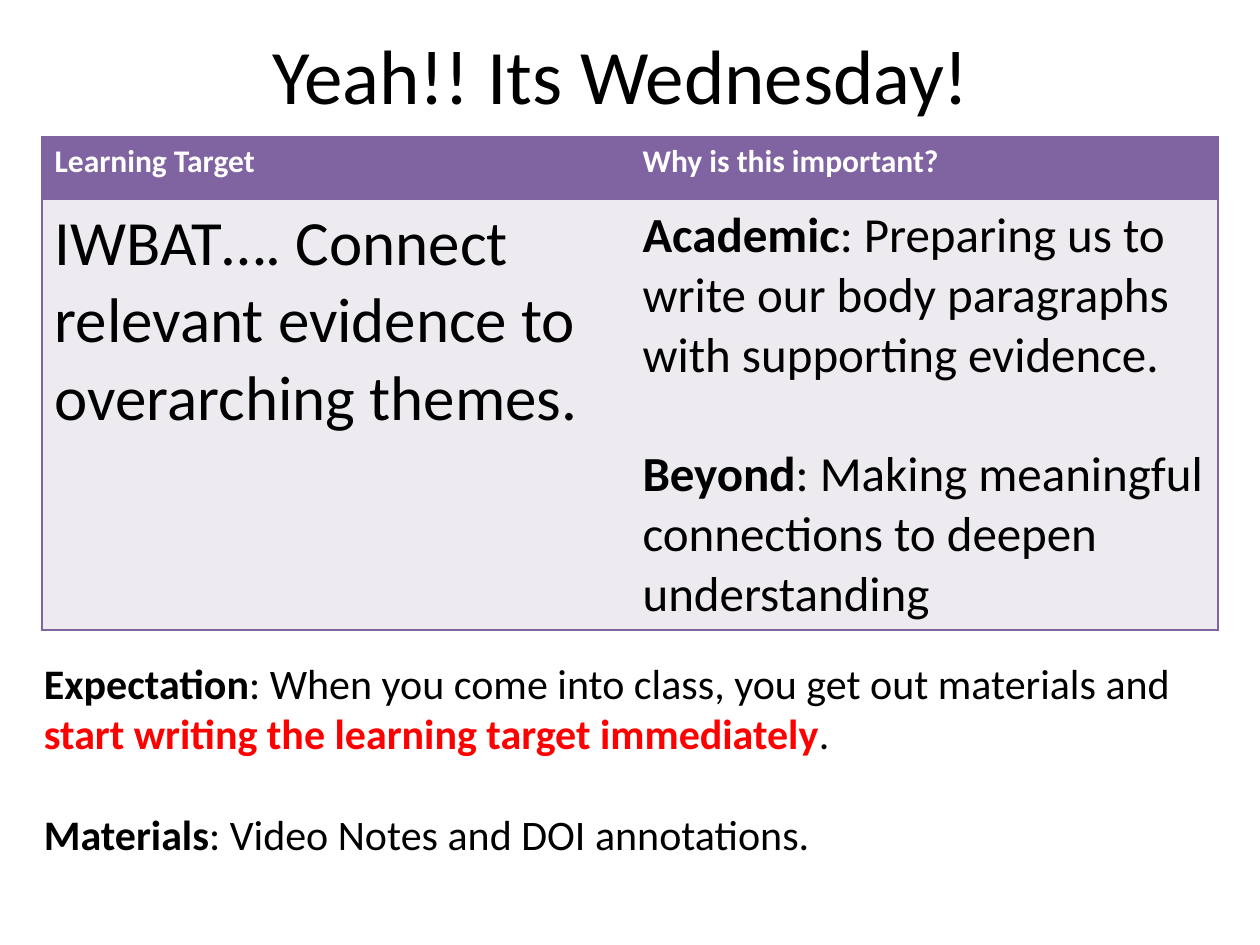
from pptx import Presentation
from pptx.util import Inches, Pt
from pptx.dml.color import RGBColor as RGB
from pptx.enum.text import PP_ALIGN as AL, MSO_ANCHOR as ANC
from pptx.oxml import parse_xml
from pptx.oxml.ns import nsdecls

COLORS = {"text": "000000", "head": "8064A2", "cell": "EDEAF0",
          "white": "FFFFFF", "alert": "FF0000"}
U = Inches(1) // 12  # grid unit: 120 columns by 90 rows

prs = Presentation()
prs.slide_width, prs.slide_height = 120 * U, 90 * U
s = prs.slides.add_slide(prs.slide_layouts[6])


def write(tf, paragraphs, size, gap=0):
    """Fill a text frame with paragraphs of (text, bold, colour) runs."""
    tf.word_wrap = True
    for i, runs in enumerate(paragraphs):
        p = tf.paragraphs[0] if i == 0 else tf.add_paragraph()
        if i:
            p.space_before = Pt(gap)
        for text, bold, color in runs:
            r = p.add_run()
            r.text = text
            r.font.name, r.font.size, r.font.bold = "Calibri", Pt(size), bold
            r.font.color.rgb = RGB.from_string(COLORS[color])


def border(cell, sides):
    """Outline the given sides of a cell and clear the others."""
    tcPr = cell._tc.get_or_add_tcPr()
    for i, side in enumerate("LRTB"):
        line = (f'<a:solidFill><a:srgbClr val="{COLORS["head"]}"/></a:solidFill>'
                if side in sides else "<a:noFill/>")
        tcPr.insert(i, parse_xml(
            f'<a:ln{side} {nsdecls("a")} w="12700">{line}</a:ln{side}>'))


# Title
tf = s.shapes.add_textbox(9 * U, 2 * U, 102 * U, 10 * U).text_frame
tf.vertical_anchor = ANC.MIDDLE
write(tf, [[("Yeah!! Its Wednesday! ", False, "text")]], 44)
tf.paragraphs[0].alignment = AL.CENTER

# Learning target table: paragraphs, text size, fill, outlined sides
rows = [
    [([[("Learning Target", True, "white")]], 18, "head", "LTB"),
     ([[("Why is this important?", True, "white")]], 18, "head", "RTB")],
    [([[("IWBAT…. Connect relevant evidence to overarching themes.", False, "text")]],
      36, "cell", "LTB"),
     ([[("Academic", True, "text"),
        (": Preparing us to write our body paragraphs with supporting evidence.",
         False, "text")],
       [("Beyond", True, "text"),
        (": Making meaningful connections to deepen understanding", False, "text")]],
      28, "cell", "RTB")],
]
table = s.shapes.add_table(2, 2, 4 * U, 13 * U, 112 * U, 47 * U).table
table.horz_banding = False
for row, height in zip(table.rows, (6, 41)):
    row.height = height * U
for y, row in enumerate(rows):
    for x, (paragraphs, size, fill, sides) in enumerate(row):
        cell = table.cell(y, x)
        cell.fill.solid()
        cell.fill.fore_color.rgb = RGB.from_string(COLORS[fill])
        border(cell, sides)
        write(cell.text_frame, paragraphs, size, gap=34)

# Expectation and materials
tf = s.shapes.add_textbox(3 * U, 62 * U, 114 * U, 20.6 * U).text_frame
write(tf, [
    [("Expectation", True, "text"),
     (": When you come into class, you get out materials and ", False, "text"),
     ("start writing the learning target immediately", True, "alert"),
     (".", False, "text")],
    [("Materials", True, "text"),
     (": Video Notes and DOI annotations.", False, "text")],
], 24, gap=29)

prs.save("out.pptx")
